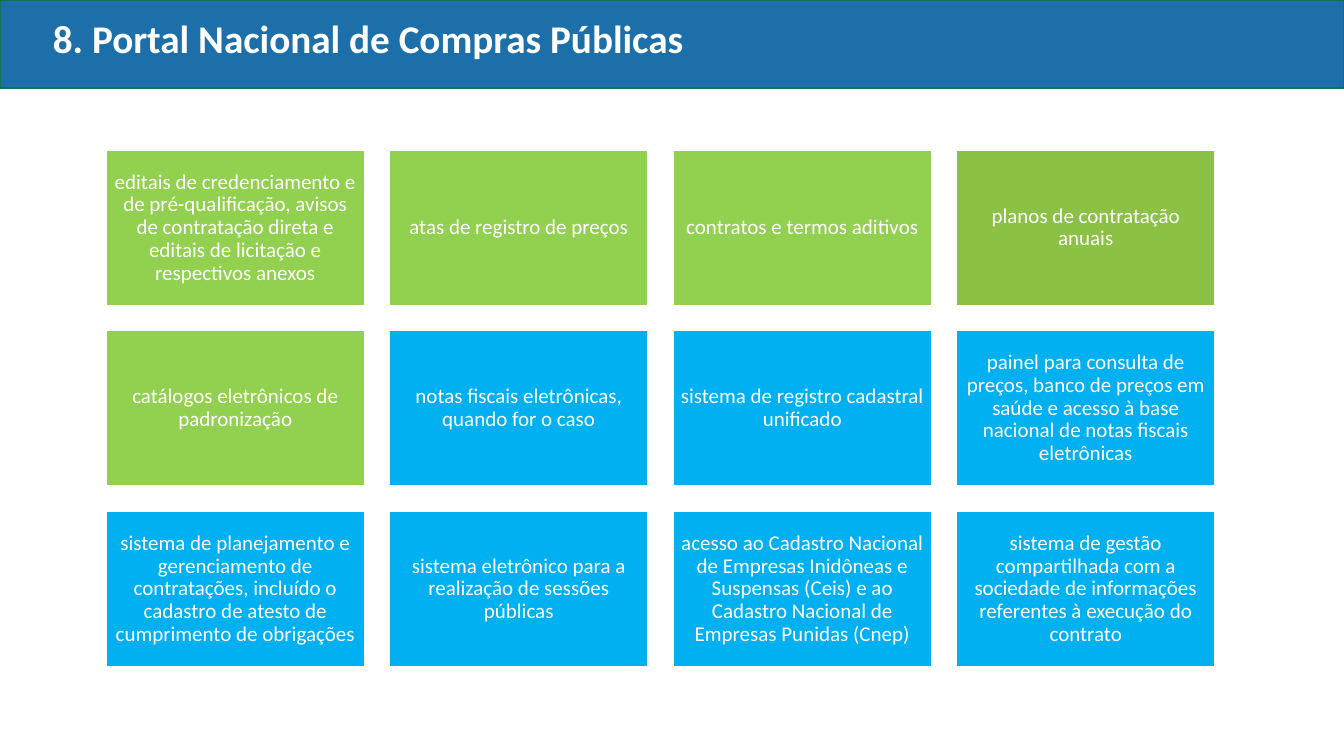
from dataclasses import dataclass

from pptx import Presentation
from pptx.dml.color import RGBColor
from pptx.enum.shapes import MSO_SHAPE
from pptx.enum.text import MSO_ANCHOR, PP_ALIGN
from pptx.shapes.autoshape import Shape
from pptx.slide import Slide
from pptx.util import Emu, Pt

EMU_PER_PX = 9525
FONT_NAME = "Calibri"

WHITE = RGBColor(0xFF, 0xFF, 0xFF)
HEADER_BLUE = RGBColor(0x1D, 0x6F, 0xA9)
HEADER_BORDER = RGBColor(0x15, 0x72, 0x59)
GREEN = RGBColor(0x92, 0xD0, 0x50)
DARK_GREEN = RGBColor(0x8B, 0xC1, 0x45)
BLUE = RGBColor(0x00, 0xB0, 0xF0)

# Card grid, in px
COLUMNS = 4
GRID_LEFT, GRID_TOP = 101, 143
CARD_WIDTH, CARD_HEIGHT = 246, 148
COLUMN_STEP, ROW_STEP = 270, 172
CARD_INSET = 6


@dataclass(frozen=True)
class Box:
    left: int
    top: int
    width: int
    height: int

    def to_emu(self) -> tuple[Emu, Emu, Emu, Emu]:
        return px(self.left), px(self.top), px(self.width), px(self.height)


@dataclass(frozen=True)
class Card:
    text: str
    fill: RGBColor


CARDS = [
    Card("editais de credenciamento e de pré-qualificação, avisos de contratação "
         "direta e editais de licitação e respectivos anexos", GREEN),
    Card("atas de registro de preços", GREEN),
    Card("contratos e termos aditivos", GREEN),
    Card("planos de contratação anuais", DARK_GREEN),
    Card("catálogos eletrônicos de padronização", GREEN),
    Card("notas fiscais eletrônicas, quando for o caso", BLUE),
    Card("sistema de registro cadastral unificado", BLUE),
    Card("painel para consulta de preços, banco de preços em saúde e acesso à base "
         "nacional de notas fiscais eletrônicas", BLUE),
    Card("sistema de planejamento e gerenciamento de contratações, incluído o "
         "cadastro de atesto de cumprimento de obrigações", BLUE),
    Card("sistema eletrônico para a realização de sessões públicas", BLUE),
    Card("acesso ao Cadastro Nacional de Empresas Inidôneas e Suspensas (Ceis) e ao "
         "Cadastro Nacional de Empresas Punidas (Cnep)", BLUE),
    Card("sistema de gestão compartilhada com a sociedade de informações referentes "
         "à execução do contrato", BLUE),
]


def px(length: int) -> Emu:
    return Emu(length * EMU_PER_PX)


def add_rectangle(slide: Slide, box: Box, fill: RGBColor, border: RGBColor) -> Shape:
    shape = slide.shapes.add_shape(MSO_SHAPE.RECTANGLE, *box.to_emu())
    shape.shadow.inherit = False
    shape.fill.solid()
    shape.fill.fore_color.rgb = fill
    shape.line.color.rgb = border
    shape.line.width = Pt(1)
    return shape


def write_text(shape: Shape, text: str, size: int, bold: bool, alignment: PP_ALIGN) -> None:
    frame = shape.text_frame
    frame.word_wrap = True
    frame.vertical_anchor = MSO_ANCHOR.MIDDLE
    paragraph = frame.paragraphs[0]
    paragraph.alignment = alignment
    paragraph.line_spacing = 0.9
    run = paragraph.add_run()
    run.text = text
    font_format = {"name": FONT_NAME, "size": Pt(size), "bold": bold}
    for attribute, value in font_format.items():
        setattr(run.font, attribute, value)
    run.font.color.rgb = WHITE


def add_card(slide: Slide, card: Card, index: int) -> None:
    row, column = divmod(index, COLUMNS)
    box = Box(GRID_LEFT + column * COLUMN_STEP, GRID_TOP + row * ROW_STEP,
              CARD_WIDTH, CARD_HEIGHT)
    shape = add_rectangle(slide, box, card.fill, WHITE)
    for side in ("left", "top", "right", "bottom"):
        setattr(shape.text_frame, f"margin_{side}", px(CARD_INSET))
    write_text(shape, card.text, 15, False, PP_ALIGN.CENTER)


def main() -> None:
    presentation = Presentation()
    presentation.slide_width, presentation.slide_height = px(1280), px(720)
    slide = presentation.slides.add_slide(presentation.slide_layouts[6])

    # Header band and title
    add_rectangle(slide, Box(0, 0, 1280, 84), HEADER_BLUE, HEADER_BORDER)
    title = slide.shapes.add_textbox(*Box(41, 0, 1104, 78).to_emu())
    write_text(title, "8. Portal Nacional de Compras Públicas", 28, True, PP_ALIGN.LEFT)

    # Grid of portal contents
    for index, card in enumerate(CARDS):
        add_card(slide, card, index)

    presentation.save("out.pptx")


if __name__ == "__main__":
    main()
